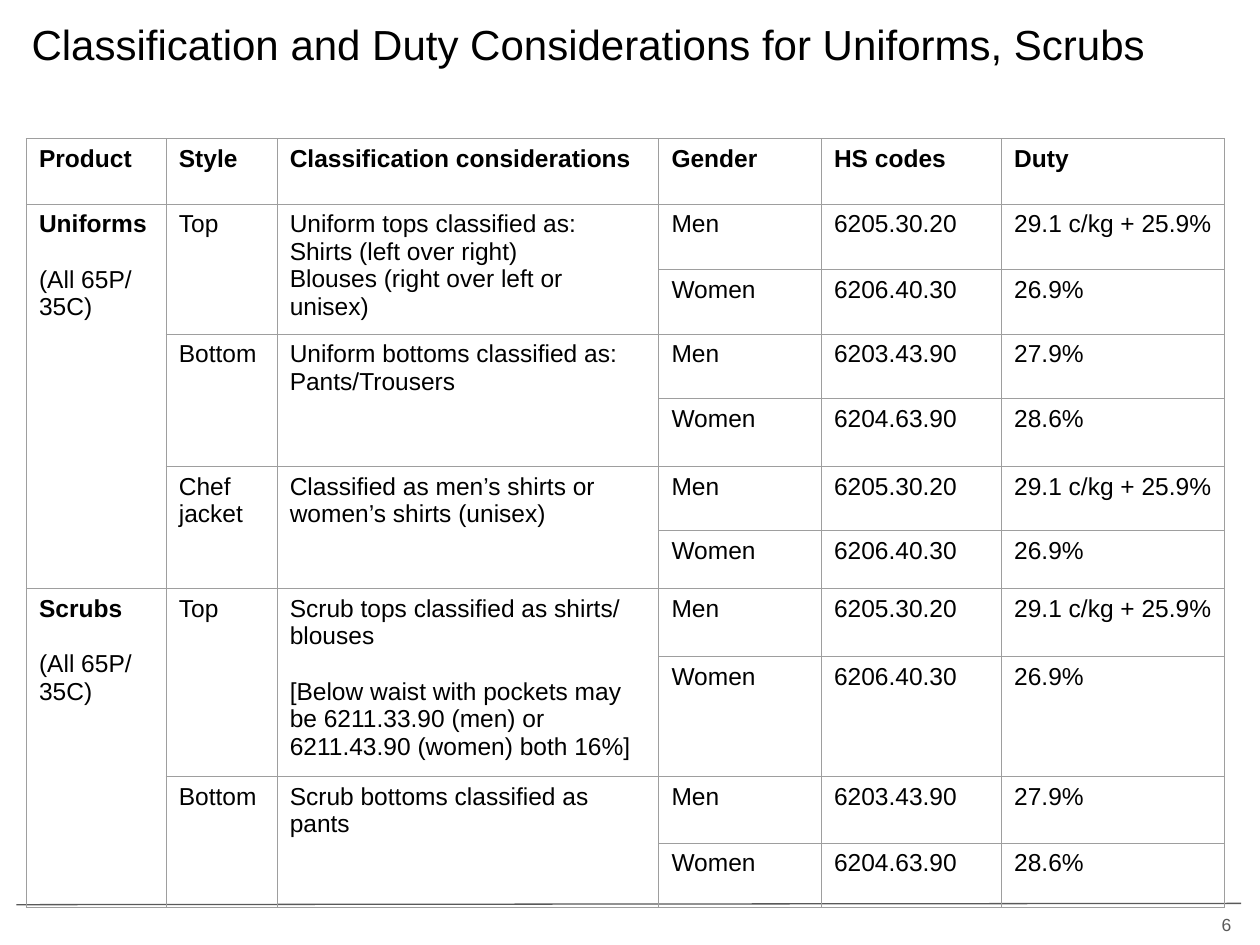
from lxml.etree import SubElement
from pptx import Presentation
from pptx.dml.color import RGBColor
from pptx.enum.shapes import MSO_CONNECTOR
from pptx.enum.text import MSO_ANCHOR, PP_ALIGN
from pptx.oxml import parse_xml
from pptx.oxml.ns import nsdecls, qn
from pptx.util import Inches, Pt

BLACK = RGBColor(0x00, 0x00, 0x00)
GREY = RGBColor(0x59, 0x59, 0x59)
BORDER = RGBColor(0x9E, 0x9E, 0x9E)

COLUMN_WIDTHS = [1.11, 0.88, 3.03, 1.29, 1.43, 1.77]
ROW_HEIGHTS = [0.52, 0.52, 0.46, 0.51, 0.54, 0.51, 0.46, 0.54, 0.88, 0.53, 0.51]
HEADERS = ["Product", "Style", "Classification considerations", "Gender", "HS codes", "Duty"]
SHIRT_DUTIES = [
    ("Men", "6205.30.20", "29.1 c/kg + 25.9%"),
    ("Women", "6206.40.30", "26.9%"),
]
PANTS_DUTIES = [
    ("Men", "6203.43.90", "27.9%"),
    ("Women", "6204.63.90", "28.6%"),
]
PRODUCTS = [
    ("Uniforms", [
        ("Top", ["Uniform tops classified as:", "Shirts (left over right)",
                 "Blouses (right over left or unisex)"], SHIRT_DUTIES),
        ("Bottom", ["Uniform bottoms classified as:", "Pants/Trousers"], PANTS_DUTIES),
        ("Chef jacket", ["Classified as men’s shirts or women’s shirts (unisex)"], SHIRT_DUTIES),
    ]),
    ("Scrubs", [
        ("Top", ["Scrub tops classified as shirts/ blouses",
                 "[Below waist with pockets may be 6211.33.90 (men) or "
                 "6211.43.90 (women) both 16%]"], SHIRT_DUTIES),
        ("Bottom", ["Scrub bottoms classified as pants"], PANTS_DUTIES),
    ]),
]
FABRIC = "(All 65P/ 35C)"


class SlideBuilder:
    font_name = "Arial"
    frame_format = {
        "word_wrap": True,
        "margin_left": Inches(0.1),
        "margin_right": Inches(0.1),
        "margin_top": Inches(0.1),
        "margin_bottom": Inches(0.1),
    }
    cell_format = {
        "margin_left": Inches(0.1),
        "margin_right": Inches(0.1),
        "margin_top": Inches(0.05),
        "margin_bottom": Inches(0.05),
        "vertical_anchor": MSO_ANCHOR.TOP,
    }

    def __init__(self, presentation):
        self.slide = presentation.slides.add_slide(presentation.slide_layouts[5])

    def apply(self, target, values):
        for name, value in values.items():
            setattr(target, name, value)

    def fill_paragraph(self, paragraph, text, size, color=BLACK, bold=False, align=PP_ALIGN.LEFT):
        paragraph.text = text
        paragraph.alignment = align
        self.apply(paragraph.font, {"name": self.font_name, "size": Pt(size), "bold": bold})
        paragraph.font.color.rgb = color

    def title(self, text, left, top, width, height):
        shape = self.slide.shapes.title
        self.apply(shape, {"left": Inches(left), "top": Inches(top),
                           "width": Inches(width), "height": Inches(height)})
        self.apply(shape.text_frame, {**self.frame_format, "vertical_anchor": MSO_ANCHOR.TOP})
        self.fill_paragraph(shape.text_frame.paragraphs[0], text, 24)

    def text_box(self, text, left, top, width, height):
        shape = self.slide.shapes.add_textbox(
            Inches(left), Inches(top), Inches(width), Inches(height))
        self.apply(shape.text_frame, {**self.frame_format, "vertical_anchor": MSO_ANCHOR.MIDDLE})
        self.fill_paragraph(shape.text_frame.paragraphs[0], text, 10, GREY, align=PP_ALIGN.RIGHT)

    def line(self, start_x, start_y, end_x, end_y):
        connector = self.slide.shapes.add_connector(
            MSO_CONNECTOR.STRAIGHT,
            Inches(start_x), Inches(start_y), Inches(end_x), Inches(end_y))
        connector.line.color.rgb = GREY
        connector.line.width = Pt(0.75)
        SubElement(connector._element.spPr, qn("a:effectLst"))

    def table(self, left, top, widths, heights):
        table = self.slide.shapes.add_table(
            len(heights), len(widths), Inches(left), Inches(top),
            Inches(sum(widths)), Inches(sum(heights))).table
        self.apply(table, {"first_row": False, "horz_banding": False})
        for column, width in zip(table.columns, widths):
            column.width = Inches(width)
        for row, height in zip(table.rows, heights):
            row.height = Inches(height)
        for cell in table.iter_cells():
            self.apply(cell, self.cell_format)
            cell.fill.background()
            self.borders(cell)
        return table

    def borders(self, cell):
        properties = cell._tc.get_or_add_tcPr()
        for index, side in enumerate(("lnL", "lnR", "lnT", "lnB")):
            properties.insert(index, parse_xml(
                f'<a:{side} {nsdecls("a")} w="{Pt(0.75)}"><a:solidFill>'
                f'<a:srgbClr val="{BORDER}"/></a:solidFill></a:{side}>'))

    def cell(self, table, row, column, lines, bold_first=False, gap_before=None, span=1):
        cell = table.cell(row, column)
        if span > 1:
            cell.merge(table.cell(row + span - 1, column))
        for index, text in enumerate(lines):
            frame = cell.text_frame
            paragraph = frame.add_paragraph() if index else frame.paragraphs[0]
            self.fill_paragraph(paragraph, text, 14, bold=bold_first and index == 0)
            if index and index == gap_before:
                paragraph.space_before = Pt(16)

    def duty_table(self, left, top):
        table = self.table(left, top, COLUMN_WIDTHS, ROW_HEIGHTS)
        for column, header in enumerate(HEADERS):
            self.cell(table, 0, column, [header], bold_first=True)
        row = 1
        for product, styles in PRODUCTS:
            span = sum(len(duties) for _, _, duties in styles)
            self.cell(table, row, 0, [product, FABRIC], bold_first=True, gap_before=1, span=span)
            for style, considerations, duties in styles:
                gap_before = 1 if considerations[-1].startswith("[") else None
                self.cell(table, row, 1, [style], span=len(duties))
                self.cell(table, row, 2, considerations, gap_before=gap_before, span=len(duties))
                for duty in duties:
                    for column, text in enumerate(duty, start=3):
                        self.cell(table, row, column, [text])
                    row += 1


def main():
    presentation = Presentation()
    presentation.slide_width = Inches(10)
    presentation.slide_height = Inches(7.5)
    builder = SlideBuilder(presentation)
    builder.line(0.13, 7.18, 9.85, 7.17)
    builder.title("Classification and Duty Considerations for Uniforms, Scrubs",
                  0.15, 0.05, 9.51, 0.93)
    builder.text_box("6", 9.27, 7.05, 0.6, 0.57)
    builder.duty_table(0.21, 1.1)
    presentation.save("out.pptx")


if __name__ == "__main__":
    main()
